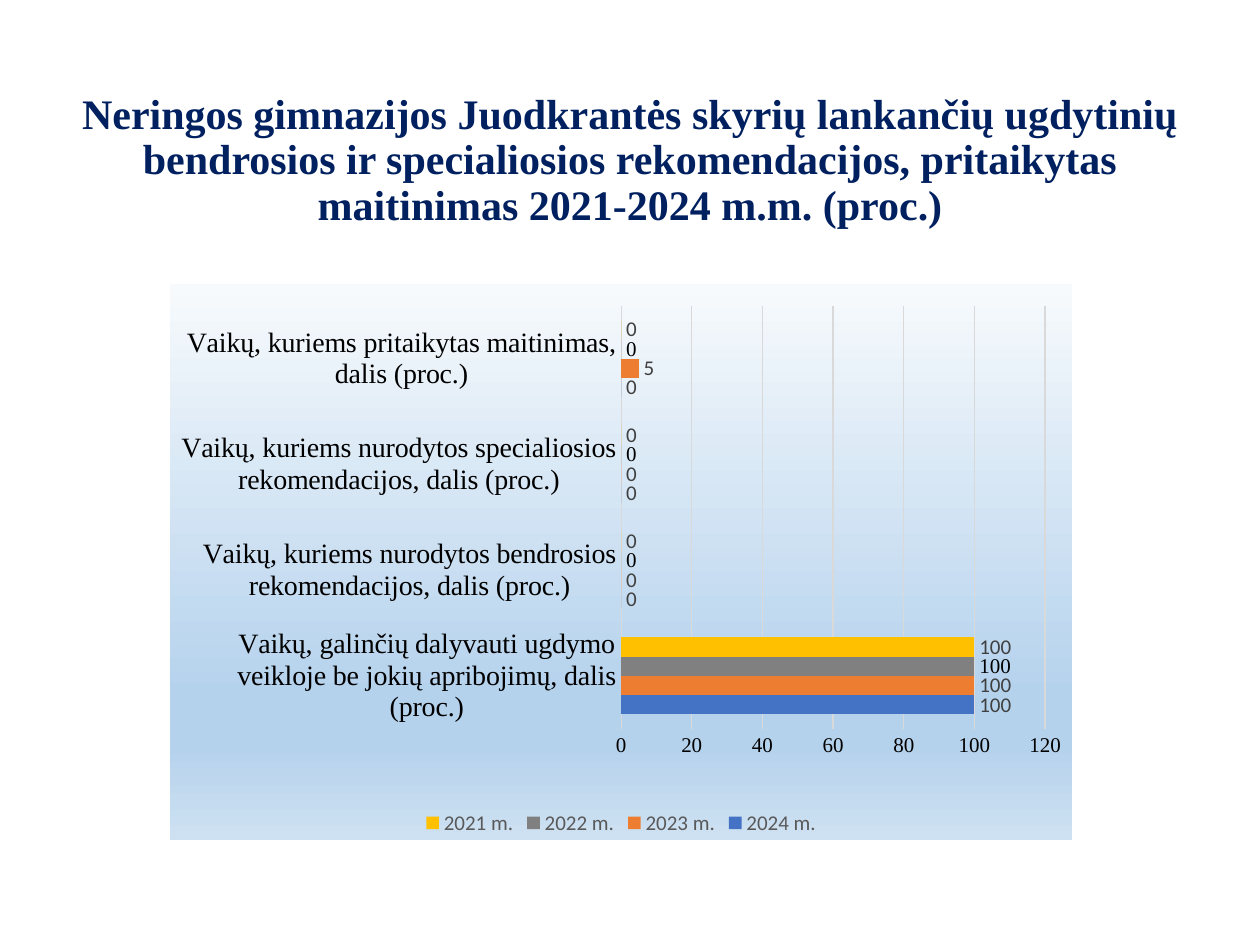
from dataclasses import dataclass

import pptx
import pptx.chart.data
import pptx.dml.color
import pptx.enum.chart
import pptx.enum.text
import pptx.oxml
import pptx.oxml.ns
import pptx.util
from pptx.dml.color import RGBColor
from pptx.util import Inches

NAVY = RGBColor(0x00, 0x20, 0x60)
BLACK = RGBColor(0x00, 0x00, 0x00)
DARK_GREY = RGBColor(0x40, 0x40, 0x40)
MID_GREY = RGBColor(0x59, 0x59, 0x59)
GRID_GREY = RGBColor(0xD9, 0xD9, 0xD9)
BLUE = RGBColor(0x44, 0x72, 0xC4)
ORANGE = RGBColor(0xED, 0x7D, 0x31)
GREY = RGBColor(0x80, 0x80, 0x80)
YELLOW = RGBColor(0xFF, 0xC0, 0x00)
BACKDROP_STOPS = (
    (0, RGBColor(0xF7, 0xFA, 0xFD)),
    (74, RGBColor(0xB5, 0xD2, 0xEC)),
    (83, RGBColor(0xB5, 0xD2, 0xEC)),
    (100, RGBColor(0xCE, 0xE1, 0xF2)),
)
SERIF = "Times New Roman"
SANS = "Calibri"

HEADING = (
    "Neringos gimnazijos Juodkrantės skyrių lankančių ugdytinių bendrosios ir "
    "specialiosios rekomendacijos, pritaikytas maitinimas 2021-2024 m.m. (proc.)"
)
CHILD_GROUPS = (
    "Vaikų, galinčių dalyvauti ugdymo veikloje be jokių apribojimų, dalis (proc.)",
    "Vaikų, kuriems nurodytos bendrosios rekomendacijos, dalis (proc.)",
    "Vaikų, kuriems nurodytos specialiosios rekomendacijos, dalis (proc.)",
    "Vaikų, kuriems pritaikytas maitinimas, dalis (proc.)",
)


@dataclass(frozen=True)
class Year:
    name: str
    shares: tuple[int, ...]
    color: RGBColor
    label_color: RGBColor = DARK_GREY
    label_font: str = SANS


YEARS = (
    Year("2024 m.", (100, 0, 0, 0), BLUE),
    Year("2023 m.", (100, 0, 0, 5), ORANGE),
    Year("2022 m.", (100, 0, 0, 0), GREY, BLACK, SERIF),
    Year("2021 m.", (100, 0, 0, 0), YELLOW),
)


def style_font(font: pptx.text.text.Font, name: str, size: float, color: RGBColor, bold: bool = False) -> None:
    font.name = name
    font.size = pptx.util.Pt(size)
    font.bold = bold
    font.color.rgb = color


def add_heading(slide: pptx.slide.Slide) -> None:
    heading = slide.shapes.title
    heading.left, heading.top = Inches(0.31), Inches(0.79)
    heading.width, heading.height = Inches(9.38), Inches(1.08)
    frame = heading.text_frame
    frame.word_wrap = True
    frame.auto_size = pptx.enum.text.MSO_AUTO_SIZE.NONE
    frame.vertical_anchor = pptx.enum.text.MSO_ANCHOR.BOTTOM
    paragraph = frame.paragraphs[0]
    paragraph.alignment = pptx.enum.text.PP_ALIGN.CENTER
    paragraph.line_spacing = 0.9
    run = paragraph.add_run()
    run.text = HEADING
    style_font(run.font, SERIF, 24, NAVY, bold=True)


def set_backdrop(chart: pptx.chart.chart.Chart) -> None:
    stops = "".join(
        f'<a:gs pos="{percent * 1000}"><a:srgbClr val="{color}"/></a:gs>'
        for percent, color in BACKDROP_STOPS
    )
    backdrop = pptx.oxml.parse_xml(
        f'<c:spPr {pptx.oxml.ns.nsdecls("c", "a")}><a:gradFill><a:gsLst>{stops}</a:gsLst>'
        '<a:lin ang="5400000" scaled="0"/></a:gradFill><a:ln><a:noFill/></a:ln></c:spPr>'
    )
    chart.element.find(pptx.oxml.ns.qn("c:chart")).addnext(backdrop)


def set_plot_area(chart: pptx.chart.chart.Chart, x: float, y: float, w: float, h: float) -> None:
    plot_area = chart.element.find(".//" + pptx.oxml.ns.qn("c:plotArea"))
    for automatic in plot_area.findall(pptx.oxml.ns.qn("c:layout")):
        plot_area.remove(automatic)
    plot_area.insert(0, pptx.oxml.parse_xml(
        f'<c:layout {pptx.oxml.ns.nsdecls("c")}><c:manualLayout><c:layoutTarget val="inner"/>'
        '<c:xMode val="edge"/><c:yMode val="edge"/>'
        f'<c:x val="{x}"/><c:y val="{y}"/><c:w val="{w}"/><c:h val="{h}"/>'
        '</c:manualLayout></c:layout>'
    ))


def style_axis(axis: pptx.chart.axis._BaseAxis, size: float) -> None:
    axis.major_tick_mark = pptx.enum.chart.XL_TICK_MARK.NONE
    axis.minor_tick_mark = pptx.enum.chart.XL_TICK_MARK.NONE
    axis.format.line.fill.background()
    style_font(axis.tick_labels.font, SERIF, size, BLACK)


def style_year(series: pptx.chart.series.BarSeries, year: Year) -> None:
    series.format.fill.solid()
    series.format.fill.fore_color.rgb = year.color
    series.invert_if_negative = False
    labels = series.data_labels
    labels.show_value = True
    labels.position = pptx.enum.chart.XL_LABEL_POSITION.OUTSIDE_END
    style_font(labels.font, year.label_font, 12, year.label_color)


def add_share_chart(slide: pptx.slide.Slide) -> None:
    shares = pptx.chart.data.CategoryChartData()
    shares.categories = CHILD_GROUPS
    for year in YEARS:
        shares.add_series(year.name, year.shares)
    chart = slide.shapes.add_chart(
        pptx.enum.chart.XL_CHART_TYPE.BAR_CLUSTERED,
        Inches(1.35), Inches(2.25), Inches(7.16), Inches(4.42), shares,
    ).chart
    chart.has_title = False
    style_font(chart.font, SANS, 10, BLACK)
    set_backdrop(chart)
    set_plot_area(chart, 0.5, 0.04, 0.47, 0.76)

    style_axis(chart.category_axis, 16)
    value_axis = chart.value_axis
    style_axis(value_axis, 12)
    value_axis.minimum_scale, value_axis.maximum_scale = 0, 120
    value_axis.major_unit = 20
    value_axis.has_major_gridlines = True
    gridline = value_axis.major_gridlines.format.line
    gridline.color.rgb = GRID_GREY
    gridline.width = pptx.util.Pt(0.75)

    bars = chart.plots[0]
    bars.gap_width = 150
    bars.vary_by_categories = False
    for series, year in zip(bars.series, YEARS):
        style_year(series, year)

    chart.has_legend = True
    chart.legend.position = pptx.enum.chart.XL_LEGEND_POSITION.BOTTOM
    chart.legend.include_in_layout = False
    style_font(chart.legend.font, SANS, 12, MID_GREY)


def main() -> None:
    deck = pptx.Presentation()
    deck.slide_width, deck.slide_height = Inches(10), Inches(7.5)
    slide = deck.slides.add_slide(deck.slide_layouts[0])
    subtitle = slide.placeholders[1].element
    subtitle.getparent().remove(subtitle)
    add_heading(slide)
    add_share_chart(slide)
    deck.save("out.pptx")


if __name__ == "__main__":
    main()
